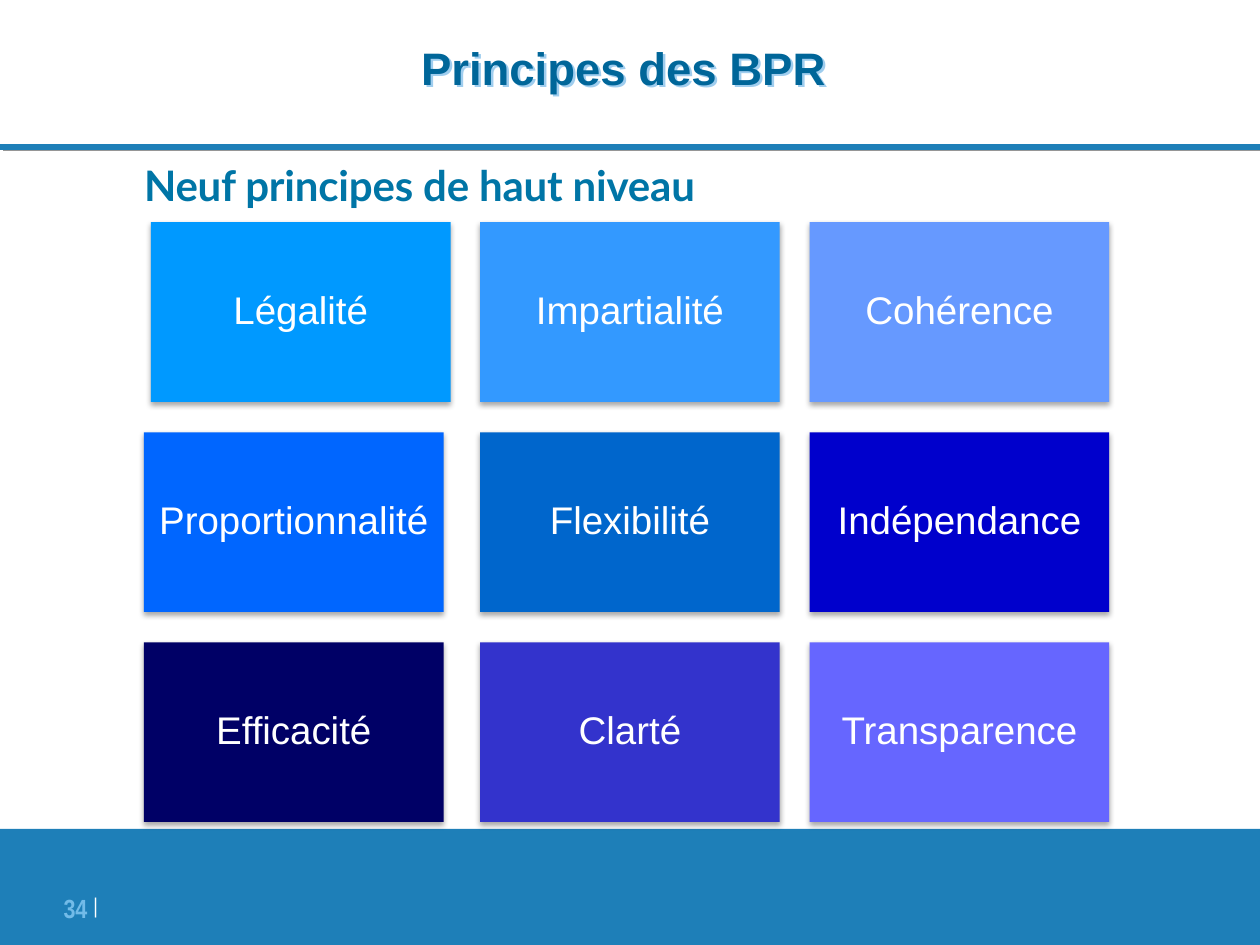
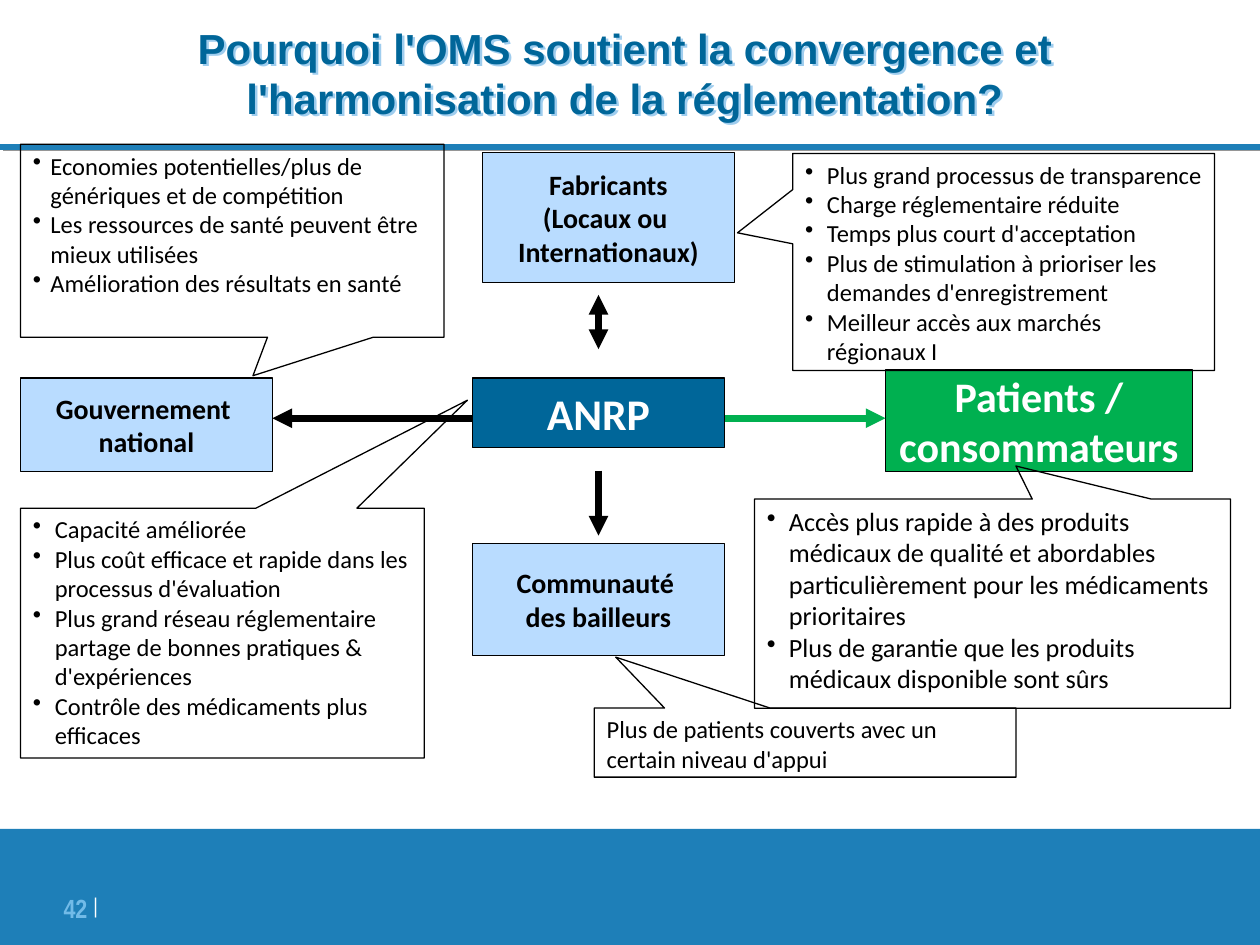
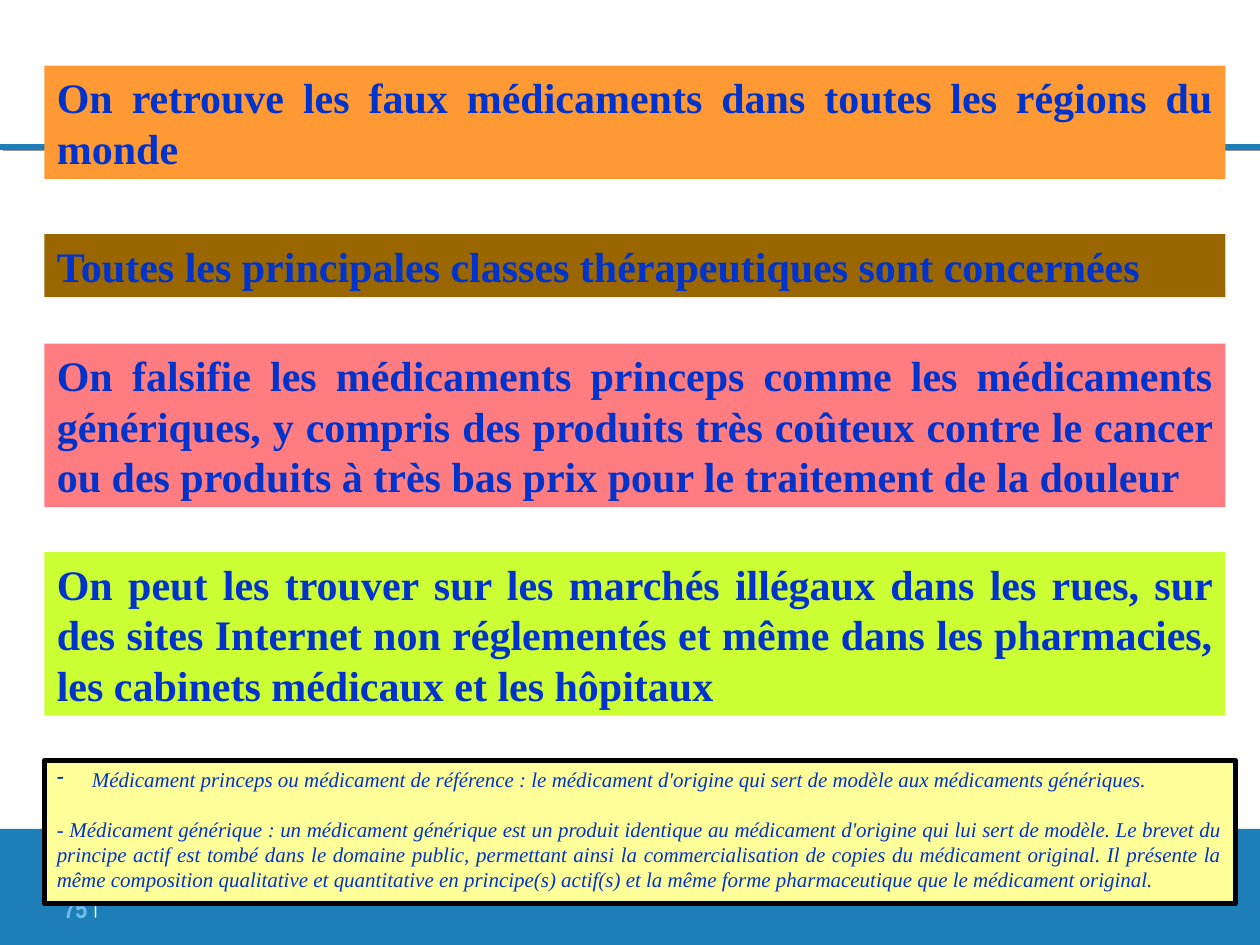
from dataclasses import dataclass
from typing import NamedTuple, Optional

from lxml import etree
from pptx import Presentation
from pptx.dml.color import RGBColor
from pptx.enum import shapes, text
from pptx.oxml.ns import qn
from pptx.util import Pt

BAND, TITLE, TITLE_GLOW, NUMBER = "1E7FB8", "006699", "9FCDEE", "72BBE8"
BLACK, WHITE, SKY, GREEN, INK = "000000", "FFFFFF", "B9DCFF", "00B050", "0033CC"
RECT = shapes.MSO_SHAPE.RECTANGLE
CALLOUT = shapes.MSO_SHAPE.RECTANGULAR_CALLOUT
MIDDLE = text.MSO_ANCHOR.MIDDLE
LEFT, CENTER, RIGHT, JUSTIFY = (
    text.PP_ALIGN.LEFT, text.PP_ALIGN.CENTER, text.PP_ALIGN.RIGHT, text.PP_ALIGN.JUSTIFY)
INSETS = (7.2, 3.6)


class Box(NamedTuple):
    left: float
    top: float
    width: float
    height: float


class Shadow(NamedTuple):
    colour: str
    alpha: int
    blur: float
    distance: float
    angle: int


class Tile(NamedTuple):
    label: str
    fill: str
    nudge: float = 0


class Actor(NamedTuple):
    box: Box
    lines: list[str]
    fill: str = SKY
    colour: str = BLACK
    size: float = 16


class Arrow(NamedTuple):
    start: tuple[float, float]
    end: tuple[float, float]
    colour: str = BLACK
    both: bool = False


class Callout(NamedTuple):
    box: Box
    tip: tuple[float, float]
    lines: list[str]
    indent: float = 12.5
    size: float = 14


class Strip(NamedTuple):
    top: float
    height: float
    fill: str
    words: str


@dataclass
class Style:
    name: str
    size: float
    colour: str
    bold: bool = False
    italic: bool = False


def rgb(colour: str) -> RGBColor:
    return RGBColor.from_string(colour)


def set_font(font, style: Style) -> None:
    values = {"name": style.name, "size": Pt(style.size),
              "bold": style.bold, "italic": style.italic}
    for key, value in values.items():
        setattr(font, key, value)
    font.color.rgb = rgb(style.colour)


def set_effects(sp, shadow: Optional[Shadow] = None) -> None:
    """Give the shape only this shadow; call it after fill and line are set."""
    effects = etree.SubElement(sp.element.spPr, qn("a:effectLst"))
    if shadow:
        outer = etree.SubElement(
            effects, qn("a:outerShdw"), blurRad=str(Pt(shadow.blur)),
            dist=str(Pt(shadow.distance)), dir=str(shadow.angle * 60000),
            algn="tl", rotWithShape="0")
        colour = etree.SubElement(outer, qn("a:srgbClr"), val=shadow.colour)
        etree.SubElement(colour, qn("a:alpha"), val=str(shadow.alpha * 1000))


def set_bullet(p, char: str, indent: float) -> None:
    pPr = p._p.get_or_add_pPr()
    pPr.set("marL", str(Pt(indent)))
    pPr.set("indent", str(-Pt(indent)))
    etree.SubElement(pPr, qn("a:buChar"), char=char)


def set_frame(tf, insets=(0, 0), anchor=text.MSO_ANCHOR.TOP, wrap=True) -> None:
    x, y = (Pt(inset) for inset in insets)
    values = {"margin_left": x, "margin_right": x, "margin_top": y, "margin_bottom": y,
              "vertical_anchor": anchor, "word_wrap": wrap,
              "auto_size": text.MSO_AUTO_SIZE.NONE}
    for key, value in values.items():
        setattr(tf, key, value)


def write(tf, lines: list[str], style: Style, align=LEFT) -> list:
    """Fill the frame with one paragraph per line and return the paragraphs."""
    for i, line in enumerate(lines):
        p = tf.paragraphs[0] if i == 0 else tf.add_paragraph()
        p.alignment = align
        r = p.add_run()
        r.text = line
        set_font(r.font, style)
    return list(tf.paragraphs)


def add_box(slide, box: Box, fill: Optional[str] = None, line: Optional[str] = None,
            weight: float = 0.75, shadow: Optional[Shadow] = None, kind=RECT):
    sp = slide.shapes.add_shape(kind, *map(Pt, box))
    if fill:
        sp.fill.solid()
        sp.fill.fore_color.rgb = rgb(fill)
    else:
        sp.fill.background()
    if line:
        sp.line.color.rgb = rgb(line)
        sp.line.width = Pt(weight)
    else:
        sp.line.fill.background()
    set_effects(sp, shadow)
    return sp


def add_line(slide, start, end, colour: str, weight: float,
             ends: tuple = (), shadow: Optional[Shadow] = None):
    sp = slide.shapes.add_connector(
        shapes.MSO_CONNECTOR.STRAIGHT, *map(Pt, (*start, *end)))
    sp.line.color.rgb = rgb(colour)
    sp.line.width = Pt(weight)
    for tag in ends:
        etree.SubElement(sp.line._get_or_add_ln(), qn(tag), type="triangle")
    set_effects(sp, shadow)
    return sp


def add_text_box(slide, box: Box):
    tf = slide.shapes.add_textbox(*map(Pt, box)).text_frame
    set_frame(tf)
    return tf


def decorate_master(prs, slide) -> None:
    """Draw the title rule and the bottom band, then move them to the master."""
    rule = add_line(slide, (0, 84), (720, 84), BAND, 3,
                    shadow=Shadow("969696", 100, 0, 2.2, 27))
    band = add_box(slide, Box(0, 473.7, 720, 66.3), BAND)
    for number, sp in enumerate((rule, band), 101):
        sp.element.xpath(".//p:cNvPr")[0].set("id", str(number))
        prs.slide_master.shapes.element.append(sp.element)


def add_number(slide, number: int) -> None:
    tf = add_text_box(slide, Box(28, 504, 28, 26))
    p = write(tf, [f"{number} "], Style("Arial Narrow", 15, NUMBER, True), RIGHT)[0]
    r = p.add_run()
    r.text = "|"
    set_font(r.font, Style("Arial Narrow", 21, WHITE))
    r.font._element.set("baseline", "14000")


def set_title(slide, words: str, box: Box, size: float) -> None:
    title = slide.shapes.title
    for key, value in zip(("left", "top", "width", "height"), box):
        setattr(title, key, Pt(value))
    set_frame(title.text_frame, anchor=MIDDLE)
    write(title.text_frame, [words], Style("Arial", size, TITLE, True), CENTER)
    set_effects(title, Shadow(TITLE_GLOW, 100, 0, 2, 45))


TILES = [
    [Tile("Légalité", "0099FF", 4), Tile("Impartialité", "3399FF"),
     Tile("Cohérence", "6699FF")],
    [Tile("Proportionnalité", "0066FF"), Tile("Flexibilité", "0066CC"),
     Tile("Indépendance", "0000CC")],
    [Tile("Efficacité", "000066"), Tile("Clarté", "3333CC"),
     Tile("Transparence", "6666FF")],
]


def build_principles(slide) -> None:
    set_title(slide, "Principes des BPR ", Box(0, -2, 720, 80.5), 26)
    shadow = Shadow(BLACK, 35, 3.1, 1.8, 90)
    for row, tiles in enumerate(TILES):
        for left, tile in zip((82.3, 274.4, 462.7), tiles):
            box = Box(left + tile.nudge, 127 + 120 * row, 171.2, 102.7)
            sp = add_box(slide, box, tile.fill, shadow=shadow)
            set_frame(sp.text_frame, (6.6, 6.6), MIDDLE)
            p = write(sp.text_frame, [tile.label], Style("Arial", 22, WHITE), CENTER)[0]
            p.line_spacing = 0.9
    tf = add_text_box(slide, Box(82.3, 85, 392, 34.5))
    p = write(tf, ["Neuf principes de haut niveau"], Style("Lato", 24, "0075A6", True))[0]
    p.line_spacing = Pt(35)
    p.runs[0].font._element.set("spc", "-10")


ACTORS = [
    Actor(Box(270, 216, 144, 39.6), ["ANRP"], TITLE, WHITE, 25),
    Actor(Box(11.7, 216, 144, 53.5), ["Gouvernement ", "national"]),
    Actor(Box(270, 310.5, 144, 64), ["Communauté ", "des bailleurs"]),
    Actor(Box(275.7, 87, 144, 74.5), ["Fabricants", "(Locaux ou ", "Internationaux)"]),
    Actor(Box(506, 211.5, 175.3, 58), ["Patients /", "consommateurs"], GREEN, WHITE, 24),
]
ARROWS = [
    Arrow((414, 239), (506, 239), GREEN),
    Arrow((342, 168.5), (342, 199.5), both=True),
    Arrow((342, 269), (342, 306)),
    Arrow((270, 239), (155.7, 239)),
]
CALLOUTS = [
    Callout(Box(453, 87.7, 241, 124), (-0.631, -0.134), [
        "Plus grand processus de transparence",
        "Charge réglementaire réduite",
        "Temps plus court d'acceptation",
        "Plus de stimulation à prioriser les demandes d'enregistrement",
        "Meilleur accès aux marchés régionaux I"]),
    Callout(Box(11.7, 82.5, 242, 110.2), (0.049, 0.7), [
        "Economies potentielles/plus de génériques et de compétition",
        "Les ressources de santé peuvent être mieux utilisées",
        "Amélioration des résultats en santé"], 10),
    Callout(Box(339.6, 404.6, 241, 39.5), (-0.449, -1.237), [
        "Plus de patients couverts avec un certain niveau d'appui"], 0),
    Callout(Box(11.7, 290.4, 230.7, 142.8), (0.607, -0.932), [
        "Capacité améliorée",
        "Plus coût efficace et rapide dans les processus d'évaluation",
        "Plus grand réseau réglementaire partage de bonnes pratiques & d'expériences",
        "Contrôle des médicaments plus efficaces"]),
    Callout(Box(431.2, 285.2, 272, 119.5), (0.049, -0.658), [
        "Accès plus rapide à des produits médicaux de qualité et abordables "
        "particulièrement pour les médicaments prioritaires",
        "Plus de garantie que les produits médicaux disponible sont sûrs"], size=15),
]


def build_convergence(slide) -> None:
    set_title(slide, "Pourquoi l'OMS soutient la convergence et l'harmonisation "
              "de la réglementation?", Box(26.6, 0, 661, 82.8), 24)
    for actor in ACTORS:
        sp = add_box(slide, actor.box, actor.fill, BLACK)
        set_frame(sp.text_frame, INSETS, MIDDLE, wrap=False)
        style = Style("Calibri", actor.size, actor.colour, True)
        write(sp.text_frame, actor.lines, style, CENTER)
    for arrow in ARROWS:
        ends = ("a:headEnd", "a:tailEnd") if arrow.both else ("a:tailEnd",)
        add_line(slide, arrow.start, arrow.end, arrow.colour, 3.75, ends)
    for callout in CALLOUTS:
        sp = add_box(slide, callout.box, line=BLACK, kind=CALLOUT)
        for i, offset in enumerate(callout.tip):
            sp.adjustments[i] = offset
        set_frame(sp.text_frame, INSETS)
        style = Style("Calibri", callout.size, BLACK)
        for p in write(sp.text_frame, callout.lines, style):
            if callout.indent:
                set_bullet(p, "•", callout.indent)


STRIPS = [
    Strip(37.6, 64.7, "FF9933",
          "On retrouve les faux médicaments dans toutes les régions du monde"),
    Strip(133.8, 36, "996600",
          "Toutes les principales classes thérapeutiques sont concernées"),
    Strip(196.4, 93.4, "FF7C80",
          "On falsifie les médicaments princeps comme les médicaments génériques, "
          "y compris des produits très coûteux contre le cancer ou des produits à "
          "très bas prix pour le traitement de la douleur"),
    Strip(315.5, 93.4, "CCFF33",
          "On peut les trouver sur les marchés illégaux dans les rues, sur des sites "
          "Internet non réglementés et même dans les pharmacies, les cabinets médicaux "
          "et les hôpitaux"),
]
DEFINITIONS = [
    "Médicament princeps ou médicament de référence : le médicament d'origine qui sert "
    "de modèle aux médicaments génériques.",
    "- Médicament générique : un médicament générique est un produit identique au "
    "médicament d'origine qui lui sert de modèle. Le brevet du principe actif est tombé "
    "dans le domaine public, permettant ainsi la commercialisation de copies du "
    "médicament original. Il présente la même composition qualitative et quantitative "
    "en principe(s) actif(s) et la même forme pharmaceutique que le médicament original.",
]


def build_fake_medicines(slide) -> None:
    for strip in STRIPS:
        sp = add_box(slide, Box(25.4, strip.top, 674.8, strip.height), strip.fill)
        set_frame(sp.text_frame, INSETS)
        write(sp.text_frame, [strip.words], Style("Times New Roman", 24, INK, True), JUSTIFY)
    sp = add_box(slide, Box(25.4, 434.4, 680.6, 82), "FFFF99", BLACK, 3)
    set_frame(sp.text_frame, INSETS)
    style = Style("Times New Roman", 12, INK, italic=True)
    princeps, generic = write(sp.text_frame, DEFINITIONS, style, JUSTIFY)
    set_bullet(princeps, "-", 20)
    generic.space_before = Pt(14)


def main() -> None:
    prs = Presentation()
    prs.slide_width, prs.slide_height = Pt(720), Pt(540)
    title_only, blank = prs.slide_layouts[5], prs.slide_layouts[6]
    pages = [(title_only, 34, build_principles), (title_only, 42, build_convergence),
             (blank, 75, build_fake_medicines)]
    for i, (layout, number, build) in enumerate(pages):
        slide = prs.slides.add_slide(layout)
        if i == 0:
            decorate_master(prs, slide)
        add_number(slide, number)
        build(slide)
    prs.save("out.pptx")


if __name__ == "__main__":
    main()
